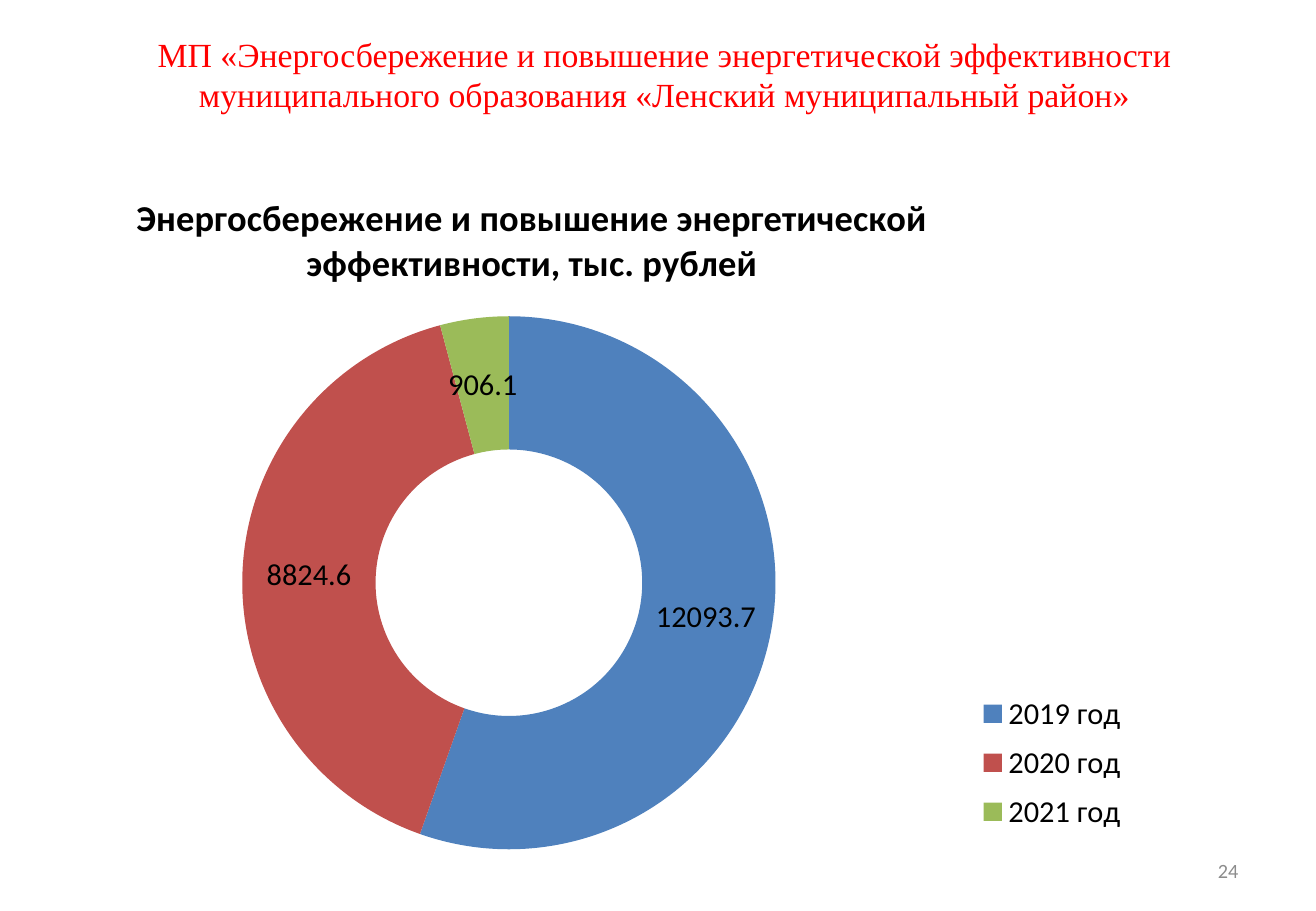
from lxml.etree import SubElement
from pptx import Presentation
from pptx.chart.data import CategoryChartData
from pptx.dml.color import RGBColor
from pptx.enum.chart import XL_CHART_TYPE, XL_LEGEND_POSITION
from pptx.enum.text import MSO_ANCHOR, PP_ALIGN
from pptx.oxml import parse_xml
from pptx.oxml.ns import nsdecls, qn
from pptx.util import Inches, Pt

WIDTH, HEIGHT = Inches(10.83), Inches(7.5)
PROGRAM = "МП «Энергосбережение и повышение энергетической эффективности муниципального образования «Ленский муниципальный район»"
CHART_TITLE = "Энергосбережение и повышение энергетической эффективности, тыс. рублей"
SPENDING = {
    "2019 год": (12093.7, "4F81BD"),
    "2020 год": (8824.6, "C0504D"),
    "2021 год": (906.1, "9BBB59"),
}


def color(value):
    return RGBColor.from_string(value)


def format_font(font, values, font_color):
    for name, value in values.items():
        setattr(font, name, value)
    font.color.rgb = color(font_color)


def share(left, top, width, height):
    return [round(part * side) for part, side in
            zip((left, top, width, height), (WIDTH, HEIGHT, WIDTH, HEIGHT))]


def add_text(slide, box, text, alignment, values, font_color, anchor):
    frame = slide.shapes.add_textbox(*share(*box)).text_frame
    frame.word_wrap = True
    frame.vertical_anchor = anchor
    paragraph = frame.paragraphs[0]
    paragraph.alignment = alignment
    run = paragraph.add_run()
    run.text = text
    format_font(run.font, values, font_color)


def place(element, index, settings):
    for layout in element.findall(qn("c:layout")):
        element.remove(layout)
    layout = parse_xml(f"<c:layout {nsdecls('c')}/>")
    manual = SubElement(layout, qn("c:manualLayout"))
    for name, value in settings.items():
        SubElement(manual, qn(f"c:{name}")).set("val", str(value))
    element.insert(index, layout)


def add_doughnut(slide, box):
    data = CategoryChartData()
    data.categories = list(SPENDING)
    data.add_series(CHART_TITLE, [amount for amount, _ in SPENDING.values()])
    chart = slide.shapes.add_chart(XL_CHART_TYPE.DOUGHNUT, *share(*box), data).chart
    format_font(chart.font, {"name": "Calibri", "size": Pt(18)}, "000000")

    chart.has_title = True
    paragraph = chart.chart_title.text_frame.paragraphs[0]
    run = paragraph.add_run()
    run.text = CHART_TITLE
    format_font(run.font, {"name": "Calibri", "size": Pt(21.6), "bold": True}, "000000")

    chart.has_legend = True
    chart.legend.position = XL_LEGEND_POSITION.RIGHT
    chart.legend.include_in_layout = False

    plot = chart.plots[0]
    plot.vary_by_categories = True
    plot.has_data_labels = True
    label_format = {"show_value": True, "show_percentage": False,
                    "number_format": "General", "number_format_is_linked": False}
    for name, value in label_format.items():
        setattr(plot.data_labels, name, value)
    for index, (_, fill_color) in enumerate(SPENDING.values()):
        fill = plot.series[0].points[index].format.fill
        fill.solid()
        fill.fore_color.rgb = color(fill_color)

    edges = {"xMode": "edge", "yMode": "edge"}
    plot_area = chart._chartSpace.chart.plotArea
    plot_area.find(qn("c:doughnutChart")).find(qn("c:holeSize")).set("val", "50")
    place(chart.chart_title._element, 1, {**edges, "x": 0.01, "y": 0.03})
    place(chart.legend._element, 1, {**edges, "x": 0.75, "y": 0.75, "w": 0.15, "h": 0.23})
    place(plot_area, 0, {"layoutTarget": "inner", **edges,
                         "x": 0.09, "y": 0.22, "w": 0.51, "h": 0.77})


def main():
    presentation = Presentation()
    presentation.slide_width, presentation.slide_height = WIDTH, HEIGHT
    slide = presentation.slides.add_slide(presentation.slide_layouts[6])
    add_text(slide, (0.72, 0.93, 0.23, 0.05), "24", PP_ALIGN.RIGHT,
             {"name": "Calibri", "size": Pt(12)}, "8C8C8C", MSO_ANCHOR.MIDDLE)
    add_text(slide, (0.04, 0.03, 0.93, 0.1), PROGRAM, PP_ALIGN.CENTER,
             {"name": "Times New Roman", "size": Pt(20)}, "FF0000", MSO_ANCHOR.TOP)
    add_doughnut(slide, (0.09, 0.18, 0.86, 0.76))
    presentation.save("out.pptx")


if __name__ == "__main__":
    main()
